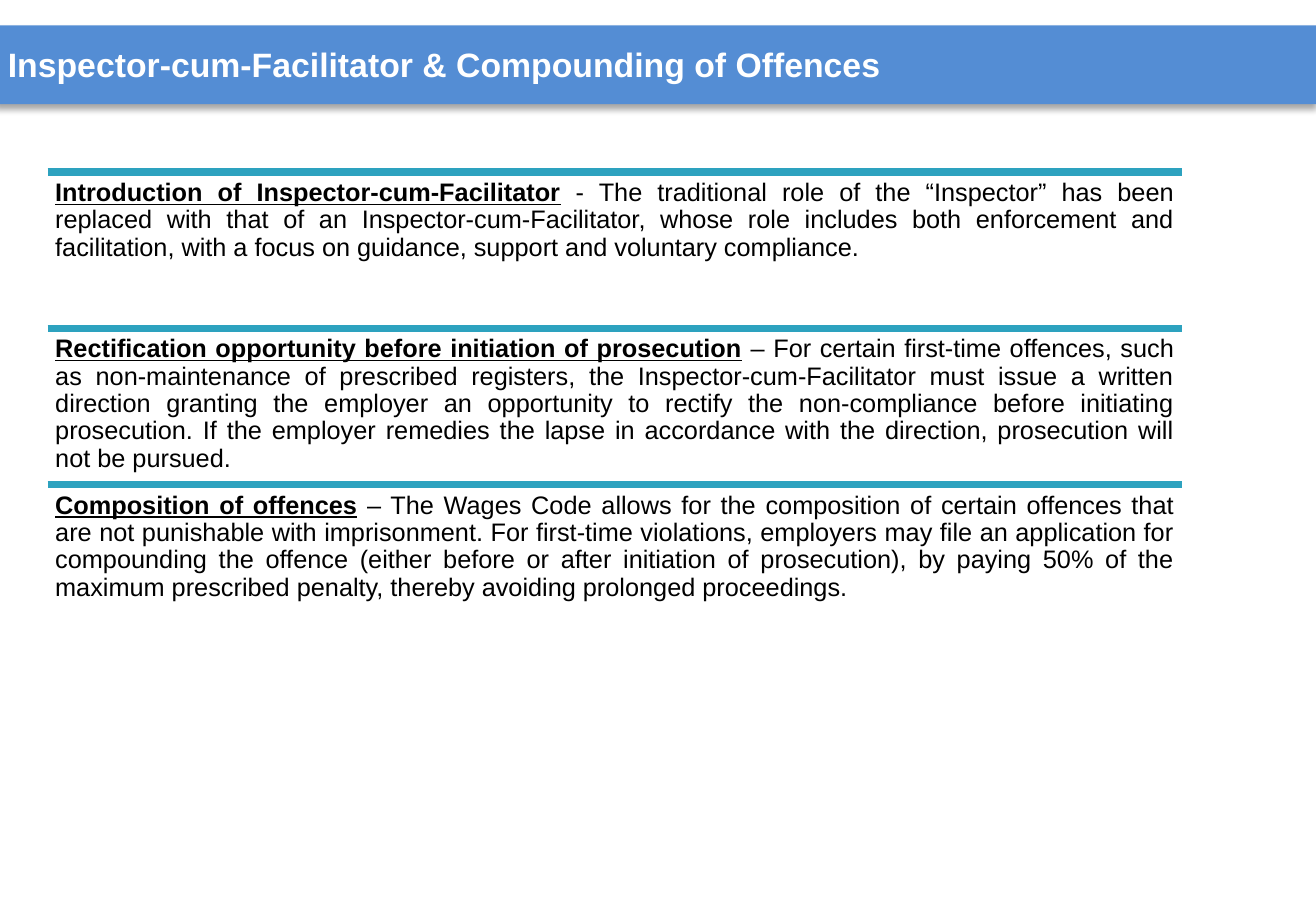
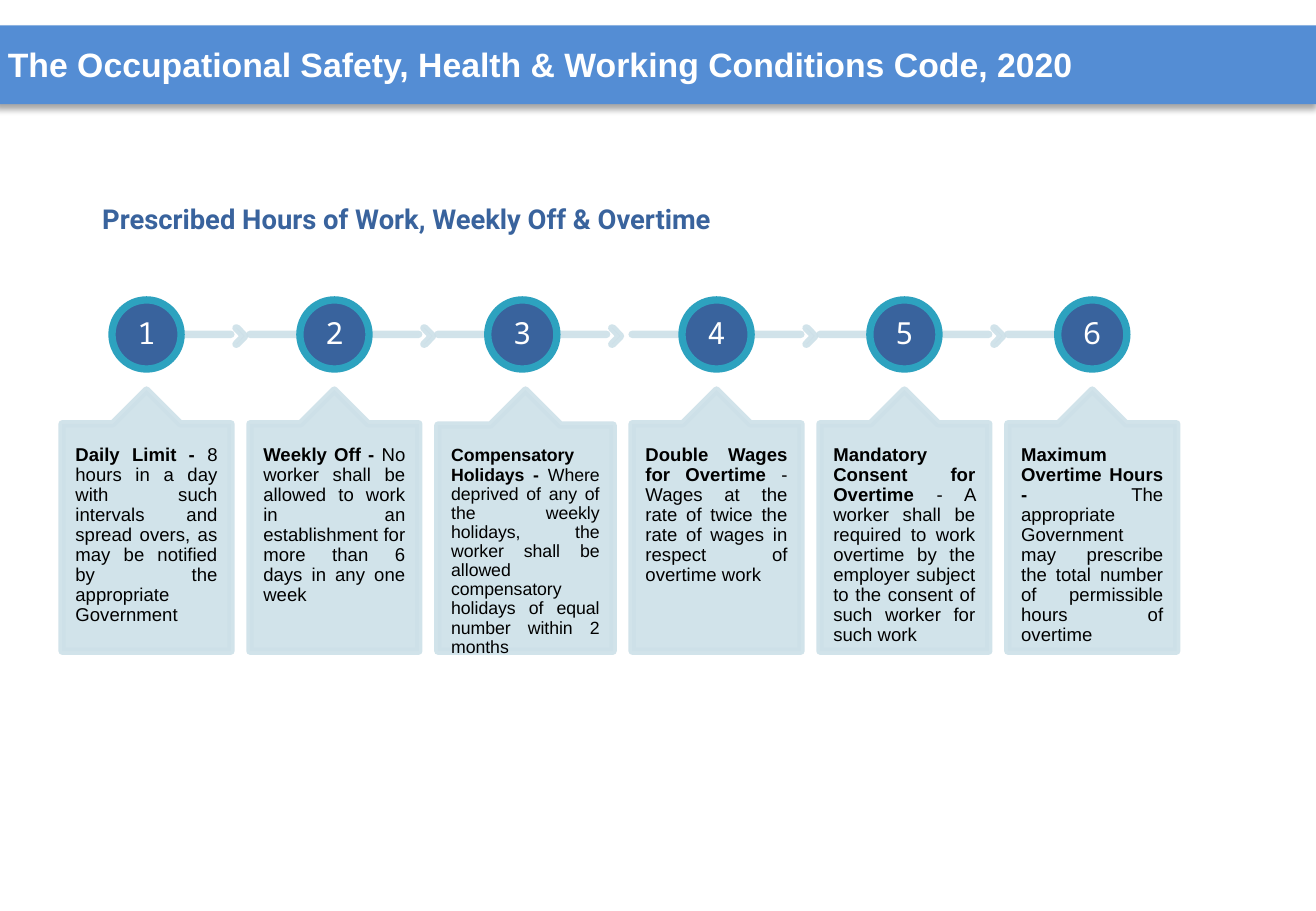
from lxml import etree
from pptx import Presentation
from pptx.dml.color import RGBColor
from pptx.enum import shapes, text
from pptx.oxml.ns import qn
from pptx.util import Pt

HUE = {"band": "548DD4", "teal": "2DA2BF", "navy": "39639D",
       "pale": "CDE0E8", "ink": "000000", "white": "FFFFFF"}
KIND = shapes.MSO_SHAPE
ALIGN = text.PP_ALIGN
EDGE = 4.33


def draw(slide, kind, box, fill, line=None, alpha=None):
    shape = slide.shapes.add_shape(kind, *map(Pt, box))
    shape.shadow.inherit = False
    shape.fill.solid()
    shape.fill.fore_color.rgb = RGBColor.from_string(HUE[fill])
    if line:
        shape.line.color.rgb = RGBColor.from_string(HUE[line])
        shape.line.width = Pt(EDGE)
    else:
        shape.line.fill.background()
    if alpha:
        for tint in shape._element.spPr.iter(qn("a:srgbClr")):
            etree.SubElement(tint, qn("a:alpha"), val=str(alpha * 1000))
    return shape


def write(shape, runs, font, pads=(7.2, 3.6), para=None, anchor=text.MSO_ANCHOR.TOP):
    frame = shape.text_frame
    form = {"word_wrap": True, "vertical_anchor": anchor,
            "margin_left": Pt(pads[0]), "margin_right": Pt(pads[0]),
            "margin_top": Pt(pads[1]), "margin_bottom": Pt(pads[1])}
    for key, val in form.items():
        setattr(frame, key, val)
    line = frame.paragraphs[0]
    for key, val in (para or {}).items():
        setattr(line, key, val)
    name, size, hue = font
    for words, style in runs:
        run = line.add_run()
        run.text = words
        run.font.color.rgb = RGBColor.from_string(HUE[hue])
        for key, val in {"name": name, "size": Pt(size), **style}.items():
            setattr(run.font, key, val)


BOLD = {"bold": True}
HEAD = {"bold": True, "underline": True}
JUST = {"alignment": ALIGN.JUSTIFY, "line_spacing": 0.9}
MID = {"alignment": ALIGN.CENTER, "line_spacing": 0.9}

deck = Presentation()
deck.slide_width, deck.slide_height = Pt(780), Pt(540)

titles = ["Inspector-cum-Facilitator & Compounding of Offences",
          "The Occupational Safety, Health & Working Conditions Code, 2020"]
pages = []
for title in titles:
    page = deck.slides.add_slide(deck.slide_layouts[6])
    band = draw(page, KIND.RECTANGLE, (-3, 15, 783, 46.8), "band")
    glow = etree.SubElement(band._element.spPr.find(qn("a:effectLst")), qn("a:outerShdw"),
                            blurRad=str(Pt(4)), dist=str(Pt(3)), dir="5400000", rotWithShape="0")
    tint = etree.SubElement(glow, qn("a:srgbClr"), val=HUE["ink"])
    etree.SubElement(tint, qn("a:alpha"), val="35000")
    box = page.shapes.add_textbox(Pt(-2.4), Pt(22.3), Pt(700), Pt(31.5))
    write(box, [(title, BOLD)], ("Arial", 20, "white"))
    pages.append(page)
rules, hours = pages

points = [
    ("Introduction of Inspector-cum-Facilitator",
     " - The traditional role of the “Inspector” has been replaced with that of an "
     "Inspector-cum-Facilitator, whose role includes both enforcement and facilitation, "
     "with a focus on guidance, support and voluntary compliance."),
    ("Rectification opportunity before initiation of prosecution",
     " – For certain first-time offences, such as non-maintenance of prescribed registers, "
     "the Inspector-cum-Facilitator must issue a written direction granting the employer an "
     "opportunity to rectify the non-compliance before initiating prosecution. If the employer "
     "remedies the lapse in accordance with the direction, prosecution will not be pursued."),
    ("Composition of offences",
     " – The Wages Code allows for the composition of certain offences that are not punishable "
     "with imprisonment. For first-time violations, employers may file an application for "
     "compounding the offence (either before or after initiation of prosecution), by paying 50% "
     "of the maximum prescribed penalty, thereby avoiding prolonged proceedings."),
]
left, top, wide, step = 28.2, 102, 672.4, 92.7
for row, (head, body) in enumerate(points):
    y = top + row * step
    rule = rules.shapes.add_connector(shapes.MSO_CONNECTOR.STRAIGHT,
                                      Pt(left), Pt(y), Pt(left + wide), Pt(y))
    rule.line.color.rgb = RGBColor.from_string(HUE["teal"])
    rule.line.width = Pt(EDGE)
    etree.SubElement(rule._element.spPr, qn("a:effectLst"))
    box = rules.shapes.add_textbox(Pt(left), Pt(y), Pt(wide), Pt(step))
    write(box, [(head, HEAD), (body, {})], ("Arial", 15, "ink"), (4.5, 4.5), JUST)

box = hours.shapes.add_textbox(Pt(53.5), Pt(118.8), Pt(672.4), Pt(33))
write(box, [("Prescribed Hours of Work, Weekly Off & Overtime", BOLD)],
      ("Roboto", 16.2, "navy"), para={"line_spacing": 0.9})

steps = [
    ("Daily Limit -", " 8 hours in a day with such intervals and spread overs, "
     "as may be notified by the appropriate Government", 100.1, 11),
    ("Weekly Off - ", "No worker shall be allowed to work in an establishment for "
     "more than 6 days in any one week", 100.1, 11),
    ("Compensatory Holidays - ", "Where deprived of any of the weekly holidays, the worker "
     "shall be allowed compensatory holidays of equal number within 2 months", 103.9, 10.5),
    ("Double Wages for Overtime", " - Wages at the rate of twice the rate of wages in "
     "respect of overtime work", 100.1, 11),
    ("Mandatory Consent for Overtime", " - A worker shall be required to work overtime by "
     "the employer subject to the consent of such worker for such work", 100.1, 11),
    ("Maximum Overtime Hours -", " The appropriate Government may prescribe the total number "
     "of permissible hours of overtime", 100.1, 11),
]
x, gap, base, foot, mid = 36.8, 11.25, 231.2, 386, 198.2
last = len(steps)
for num, (head, body, wide, size) in enumerate(steps, 1):
    start = x + 55.4 if num == 1 else x
    end = x + 50 if num == last else x + 100.1
    draw(hours, KIND.RECTANGLE, (start, mid, end - start, 0), "pale", "pale", 90)
    if num < last:
        tip = draw(hours, KIND.CHEVRON, (x + 103.1, mid - 3.8, 5.2, 9.6), "pale", "pale", 90)
        tip.adjustments[0] = 0.9
    disc = draw(hours, KIND.OVAL, (x + 29.6, 177.8, 41, 41), "navy", "teal")
    write(disc, [(str(num), {})], ("Noto Sans Mono", 18, "white"), (0, 0), MID,
          text.MSO_ANCHOR.MIDDLE)
    card = draw(hours, KIND.UP_ARROW_CALLOUT, (x, base, wide, foot - base), "pale", "pale", 90)
    for spot, val in enumerate((0.5, 0.2, 0.2, 1)):
        card.adjustments[spot] = val
    y = base + 0.2 * wide
    box = hours.shapes.add_textbox(Pt(x), Pt(y), Pt(wide), Pt(foot - y))
    write(box, [(head, BOLD), (body, {})], ("Arial", size, "ink"), (7.9, 12.8), JUST)
    x += wide + gap

deck.save("out.pptx")
